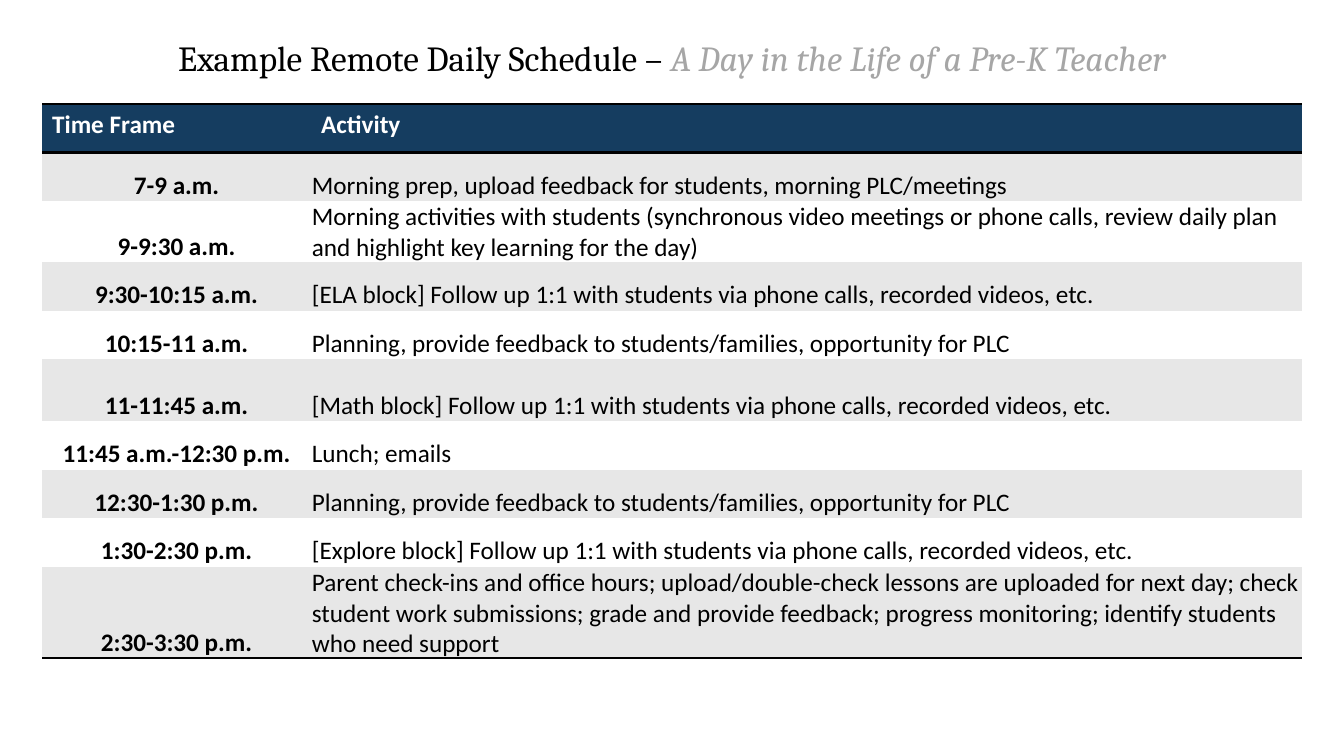
from dataclasses import dataclass

import pptx
import pptx.dml.color
import pptx.enum.text
import pptx.oxml
import pptx.oxml.ns
import pptx.presentation
import pptx.slide
import pptx.table
import pptx.text.text
import pptx.util
from pptx.util import Cm

Alignment = pptx.enum.text.PP_ALIGN
Anchor = pptx.enum.text.MSO_ANCHOR


@dataclass(frozen=True)
class Theme:
    title_font: str = "Cambria"
    body_font: str = "Calibri"
    title_size: float = 25.2
    body_size: float = 18
    border_width: float = 2
    black: str = "000000"
    white: str = "FFFFFF"
    subtitle: str = "A6A6A6"
    header: str = "153D60"
    band: str = "E7E7E7"


@dataclass(frozen=True)
class Entry:
    time: str
    activity: str
    height: float = 1.22


THEME = Theme()
NO_GRID_STYLE = "{2D5ABB26-0587-4C30-8999-92F81FD0307C}"
COLUMN_WIDTHS = (6.78, 24.97)
HEADER = Entry("Time Frame", "Activity")
PLANNING = "Planning, provide feedback to students/families, opportunity for PLC"
FOLLOW_UP = "Follow up 1:1 with students via phone calls, recorded videos, etc."
SCHEDULE = (
    Entry("7-9 a.m.", "Morning prep, upload feedback for students, morning PLC/meetings"),
    Entry(
        "9-9:30 a.m.",
        "Morning activities with students (synchronous video meetings or phone calls, "
        "review daily plan and highlight key learning for the day)",
    ),
    Entry("9:30-10:15 a.m.", f"[ELA block] {FOLLOW_UP}"),
    Entry("10:15-11 a.m.", PLANNING),
    Entry("11-11:45 a.m.", f"[Math block] {FOLLOW_UP}", 1.57),
    Entry("11:45 a.m.-12:30 p.m.", "Lunch; emails"),
    Entry("12:30-1:30 p.m.", PLANNING),
    Entry("1:30-2:30 p.m.", f"[Explore block] {FOLLOW_UP}"),
    Entry(
        "2:30-3:30 p.m.",
        "Parent check-ins and office hours; upload/double-check lessons are uploaded for "
        "next day; check student work submissions; grade and provide feedback; progress "
        "monitoring; identify students who need support",
        1.57,
    ),
)


def set_font(font: pptx.text.text.Font, name: str, size: float, color: str) -> None:
    font.name = name
    font.size = pptx.util.Pt(size)
    font.color.rgb = pptx.dml.color.RGBColor.from_string(color)


def add_title(slide: pptx.slide.Slide) -> None:
    shape = slide.shapes.add_textbox(Cm(2.33), Cm(0.43), Cm(29.21), Cm(2.18))
    frame = shape.text_frame
    frame.word_wrap = True
    frame.vertical_anchor = Anchor.MIDDLE
    paragraph = frame.paragraphs[0]
    paragraph.alignment = Alignment.CENTER
    paragraph.line_spacing = 0.9
    for text, color, italic in (
        ("Example Remote Daily Schedule – ", THEME.black, False),
        ("A Day in the Life of a Pre-K Teacher", THEME.subtitle, True),
    ):
        run = paragraph.add_run()
        run.text = text
        run.font.italic = italic
        set_font(run.font, THEME.title_font, THEME.title_size, color)


def add_border(cell: pptx.table._Cell, side: str) -> None:
    width = pptx.util.Pt(THEME.border_width)
    border = pptx.oxml.parse_xml(
        f'<a:{side} {pptx.oxml.ns.nsdecls("a")} w="{width}"><a:solidFill>'
        f'<a:srgbClr val="{THEME.black}"/></a:solidFill></a:{side}>'
    )
    cell._tc.get_or_add_tcPr().insert(0, border)


def fill_cell(cell: pptx.table._Cell, text: str, fill: str, color: str, bold: bool) -> None:
    cell.fill.solid()
    cell.fill.fore_color.rgb = pptx.dml.color.RGBColor.from_string(fill)
    paragraph = cell.text_frame.paragraphs[0]
    paragraph.text = text
    paragraph.font.bold = bold
    set_font(paragraph.font, THEME.body_font, THEME.body_size, color)


def align_body_cell(cell: pptx.table._Cell, centered: bool) -> None:
    cell.vertical_anchor = Anchor.BOTTOM
    cell.margin_left = cell.margin_right = cell.margin_top = Cm(0.02)
    cell.margin_bottom = Cm(0)
    cell.text_frame.paragraphs[0].alignment = Alignment.CENTER if centered else Alignment.LEFT


def add_schedule(slide: pptx.slide.Slide) -> None:
    entries = (HEADER, *SCHEDULE)
    frame = slide.shapes.add_table(
        len(entries), len(COLUMN_WIDTHS), Cm(1.06), Cm(2.62),
        Cm(sum(COLUMN_WIDTHS)), Cm(sum(entry.height for entry in entries)),
    )
    table = frame.table
    table.horz_banding = False
    table._tbl.tblPr.find(pptx.oxml.ns.qn("a:tableStyleId")).text = NO_GRID_STYLE
    for column, width in zip(table.columns, COLUMN_WIDTHS):
        column.width = Cm(width)
    for row_index, entry in enumerate(entries):
        table.rows[row_index].height = Cm(entry.height)
        is_header = row_index == 0
        band = THEME.band if row_index % 2 else THEME.white
        fill = THEME.header if is_header else band
        color = THEME.white if is_header else THEME.black
        for column_index, text in enumerate((entry.time, entry.activity)):
            cell = table.cell(row_index, column_index)
            is_time = column_index == 0
            fill_cell(cell, text, fill, color, is_header or is_time)
            if not is_header:
                align_body_cell(cell, is_time)
            if is_header or entry is entries[-1]:
                add_border(cell, "lnB")
            if is_header:
                add_border(cell, "lnT")


def main() -> None:
    presentation = pptx.Presentation()
    presentation.slide_width = Cm(33.87)
    presentation.slide_height = Cm(19.05)
    slide = presentation.slides.add_slide(presentation.slide_layouts[6])
    add_title(slide)
    add_schedule(slide)
    presentation.save("out.pptx")


if __name__ == "__main__":
    main()
